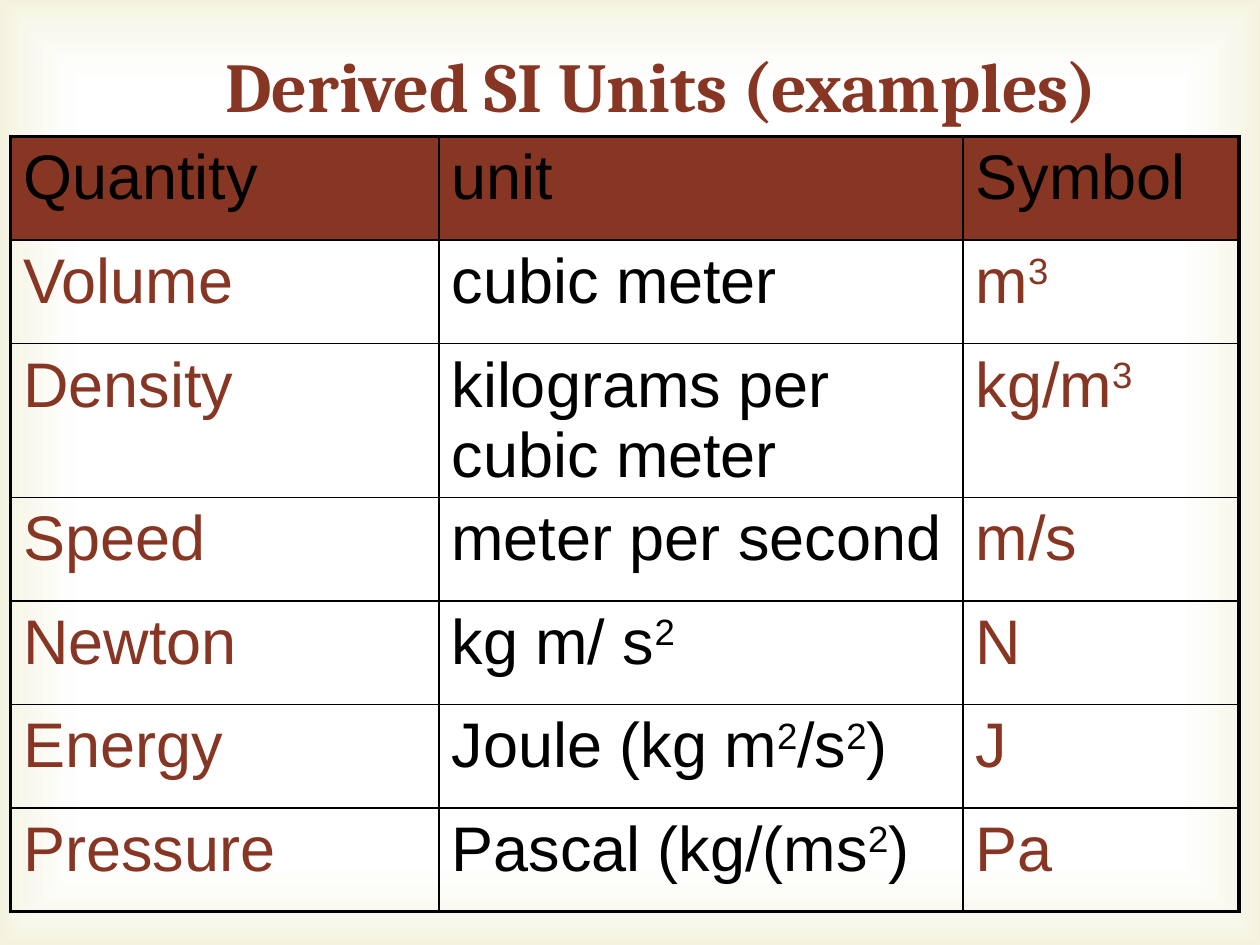
from pptx import Presentation
from pptx.dml.color import RGBColor
from pptx.enum.shapes import MSO_SHAPE
from pptx.enum.text import MSO_ANCHOR, PP_ALIGN
from pptx.oxml import parse_xml
from pptx.oxml.ns import nsdecls
from pptx.util import Pt

COLORS = {"brown": "873624", "black": "000000", "white": "FFFFFF", "cream": "D1CA75"}
SLIDE_SIZE = (720, 540)
COLUMN_WIDTHS = [244.8, 299.5, 157.7]
ROW_HEIGHT, TALL_ROW_HEIGHT = 59.2, 87.8
THIN, THICK = 1, 2.25

# A caret raises the character that follows it
ROWS = [
    ("Quantity", "unit", "Symbol"),
    ("Volume", "cubic meter", "m^3"),
    ("Density", "kilograms per cubic meter", "kg/m^3"),
    ("Speed", "meter per second", "m/s"),
    ("Newton", "kg m/ s^2", "N"),
    ("Energy", "Joule (kg m^2/s^2)", "J"),
    ("Pressure", "Pascal (kg/(ms^2)", "Pa"),
]
TALL_ROW = 2


def color(name):
    return RGBColor.from_string(COLORS[name])


class SlideBuilder:
    title_font, body_font = "Cambria", "Arial"
    title_size, body_size = 40, 36

    def __init__(self, slide):
        self.slide = slide

    def add_vignette(self, width, height):
        shape = self.slide.shapes.add_shape(MSO_SHAPE.RECTANGLE, 0, 0, Pt(width), Pt(height))
        shape.shadow.inherit = False
        shape.line.fill.background()
        shape.fill.background()
        properties = shape.fill._xPr
        gradient = parse_xml(
            f'<a:gradFill {nsdecls("a")} rotWithShape="1"><a:gsLst>'
            f'<a:gs pos="83000"><a:srgbClr val="{COLORS["white"]}"><a:alpha val="11000"/></a:srgbClr></a:gs>'
            f'<a:gs pos="100000"><a:srgbClr val="{COLORS["cream"]}"><a:alpha val="23000"/></a:srgbClr></a:gs>'
            '</a:gsLst><a:path path="rect">'
            '<a:fillToRect l="50000" t="50000" r="50000" b="50000"/></a:path></a:gradFill>')
        properties.replace(properties.find("{*}noFill"), gradient)
        # Send behind the title
        self.slide.shapes._spTree.insert(2, shape._element)

    def add_title(self, text, left, top, width, height):
        title = self.slide.shapes.title
        title.left, title.top, title.width, title.height = map(Pt, (left, top, width, height))
        title.text_frame.vertical_anchor = MSO_ANCHOR.MIDDLE
        paragraph = title.text_frame.paragraphs[0]
        paragraph.text = text
        paragraph.alignment = PP_ALIGN.CENTER
        self.style_font(paragraph.font, self.title_font, self.title_size, "brown", True)

    def style_font(self, font, name, size, color_name, bold=False):
        font.name, font.size, font.bold = name, Pt(size), bold
        font.color.rgb = color(color_name)

    def add_table(self, rows, left, top, widths, heights):
        frame = self.slide.shapes.add_table(
            len(rows), len(widths), Pt(left), Pt(top), Pt(sum(widths)), Pt(sum(heights)))
        table = frame.table
        table.first_row = table.horz_banding = False
        for column, width in zip(table.columns, widths):
            column.width = Pt(width)
        for row, height in zip(table.rows, heights):
            row.height = Pt(height)
        last_row, last_column = len(rows) - 1, len(widths) - 1
        for r, texts in enumerate(rows):
            for c, text in enumerate(texts):
                cell = table.cell(r, c)
                if r == 0:
                    cell.fill.solid()
                    cell.fill.fore_color.rgb = color("brown")
                else:
                    cell.fill.background()
                self.write_cell(cell, text, "black" if r == 0 or c == 1 else "brown")
                self.set_borders(cell, {
                    "L": c == 0, "R": c == last_column, "T": r == 0, "B": r == last_row})

    def write_cell(self, cell, text, color_name):
        paragraph = cell.text_frame.paragraphs[0]
        first, *raised_parts = text.split("^")
        pieces = [(first, False)]
        for part in raised_parts:
            pieces += [(part[0], True), (part[1:], False)]
        for piece, raised in pieces:
            if piece:
                run = paragraph.add_run()
                run.text = piece
                self.style_font(run.font, self.body_font, self.body_size, color_name)
                if raised:
                    run.font._element.set("baseline", "30000")

    def set_borders(self, cell, outer_sides):
        properties = cell._tc.get_or_add_tcPr()
        for index, (side, is_outer) in enumerate(outer_sides.items()):
            width = Pt(THICK if is_outer else THIN)
            properties.insert(index, parse_xml(
                f'<a:ln{side} {nsdecls("a")} w="{width}"><a:solidFill>'
                f'<a:srgbClr val="{COLORS["black"]}"/></a:solidFill></a:ln{side}>'))


def main():
    presentation = Presentation()
    presentation.slide_width, presentation.slide_height = map(Pt, SLIDE_SIZE)
    slide = presentation.slides.add_slide(presentation.slide_layouts[5])
    builder = SlideBuilder(slide)

    # Background and title
    builder.add_vignette(*SLIDE_SIZE)
    builder.add_title("Derived SI Units (examples)", 54, 18, 648, 60)

    # Table of units
    heights = [TALL_ROW_HEIGHT if r == TALL_ROW else ROW_HEIGHT for r in range(len(ROWS))]
    builder.add_table(ROWS, 6, 78, COLUMN_WIDTHS, heights)

    presentation.save("out.pptx")


if __name__ == "__main__":
    main()
